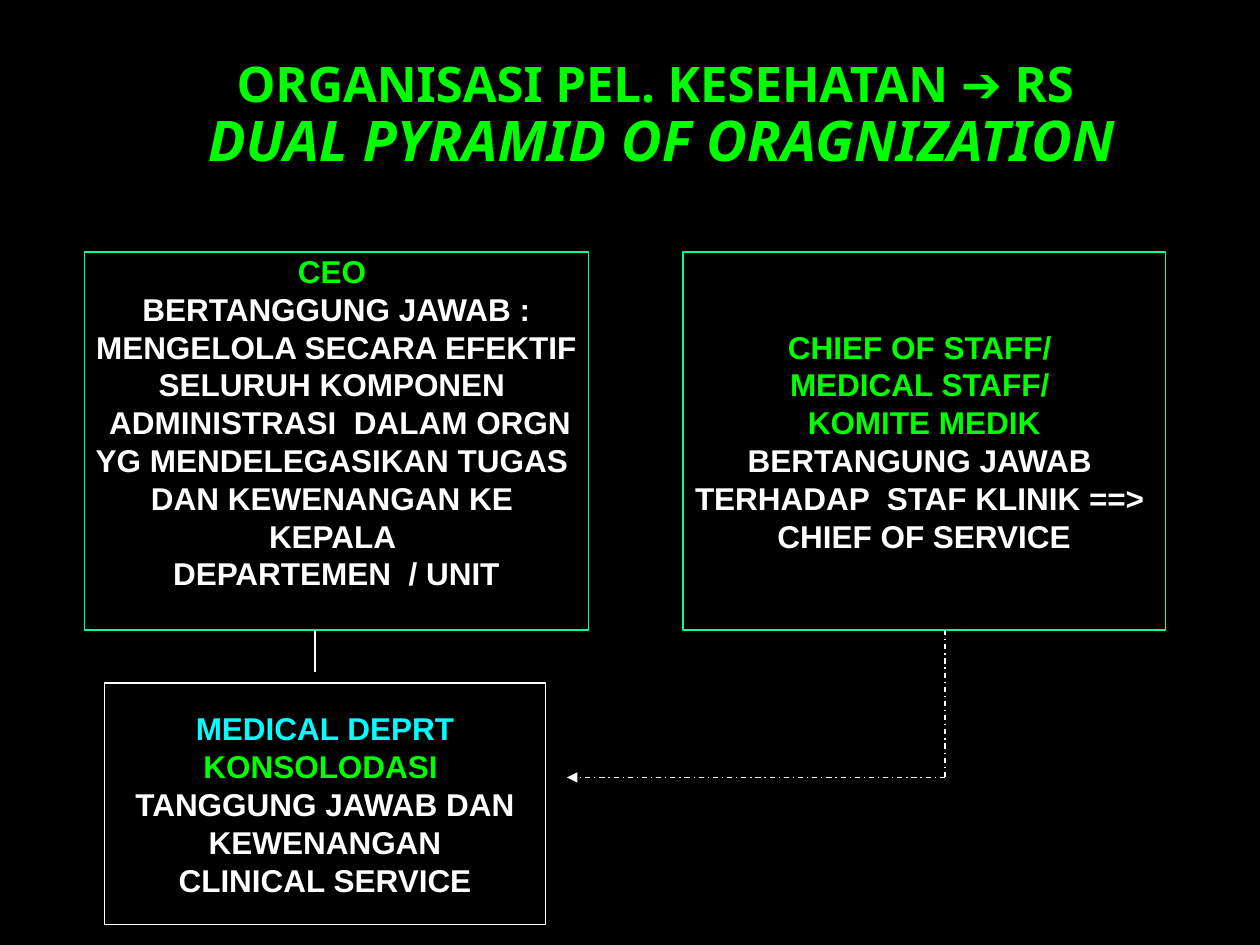
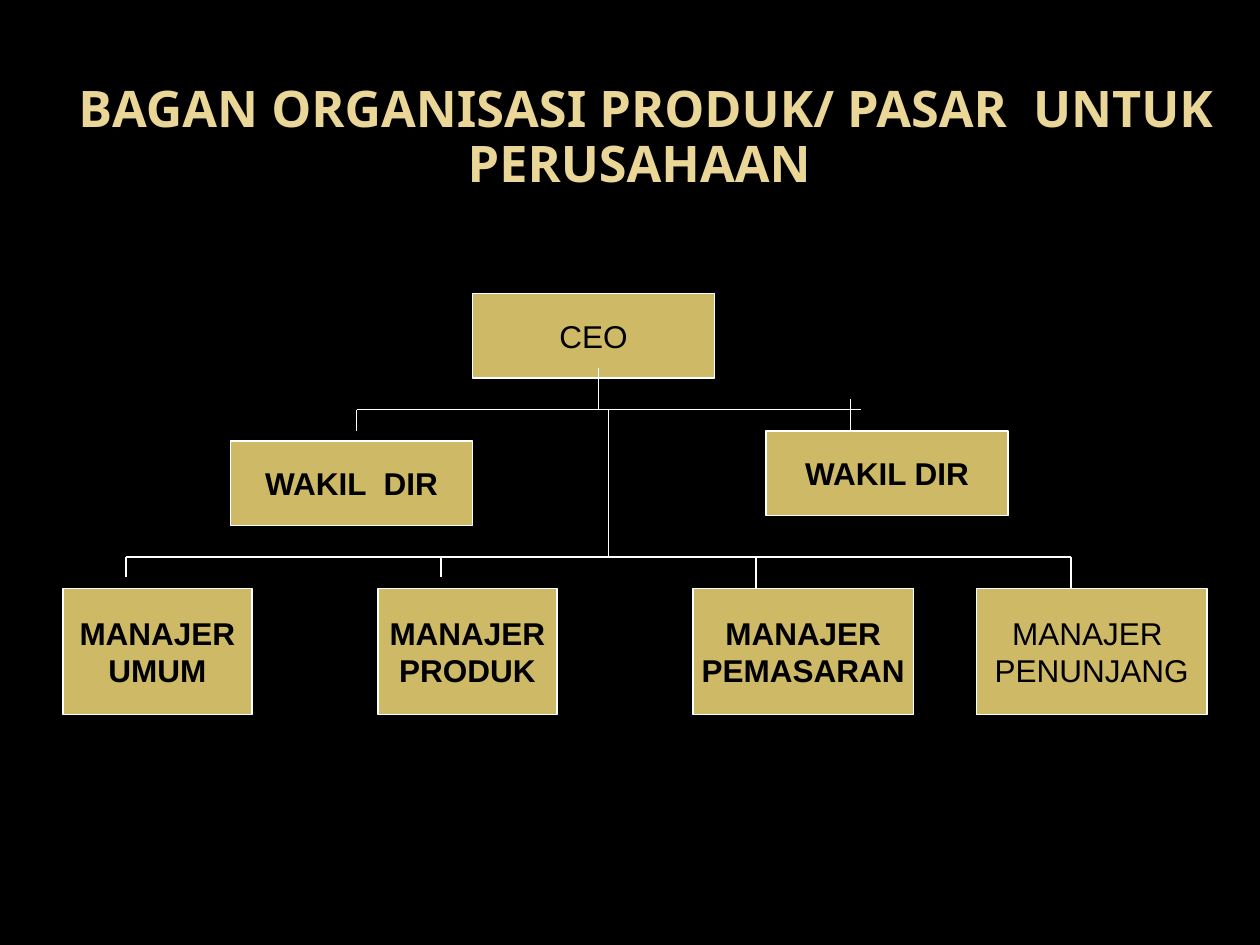
from dataclasses import dataclass
from typing import Optional, Sequence

import pptx
import pptx.dml.color
import pptx.enum.dml
import pptx.enum.shapes
import pptx.enum.text
import pptx.oxml
import pptx.oxml.ns
import pptx.presentation
import pptx.slide
import pptx.text.text
import pptx.util

Inches = pptx.util.Inches
TITLE_ONLY = 5


@dataclass(frozen=True)
class Theme:
    black: str = "000000"
    white: str = "FFFFFF"
    green: str = "00FF00"
    mint: str = "00FF99"
    cyan: str = "00FFFF"
    sand: str = "EAD696"
    gold: str = "CEB966"
    title_font: str = "Noto Sans"
    body_font: str = "Arial"
    body_size: float = 18
    title_size: float = 28
    subtitle_size: float = 32
    chart_title_size: float = 28.8
    title_spacing: float = 0.9
    line_width: float = 0.75


THEME = Theme()


@dataclass(frozen=True)
class Line:
    text: str
    color: str
    size: float = THEME.body_size
    bold: bool = True
    italic: bool = False


@dataclass(frozen=True)
class Box:
    left: float
    top: float
    width: float
    height: float
    lines: Sequence[Line]
    fill: str = THEME.black
    border: str = THEME.white
    bottom_space: Optional[float] = None


@dataclass(frozen=True)
class Link:
    x1: float
    y1: float
    x2: float
    y2: float
    dashed: bool = False
    arrow: bool = False


def rgb(color: str) -> pptx.dml.color.RGBColor:
    return pptx.dml.color.RGBColor.from_string(color)


def lines_of(color: str, *texts: str, bold: bool = True) -> list[Line]:
    return [Line(text, color, bold=bold) for text in texts]


def write_text(frame: pptx.text.text.TextFrame, lines: Sequence[Line], *,
               font: str, wrap: bool, one_paragraph: bool = False,
               spacing: Optional[float] = None) -> None:
    frame.word_wrap = wrap
    frame.auto_size = pptx.enum.text.MSO_AUTO_SIZE.NONE
    frame.vertical_anchor = pptx.enum.text.MSO_ANCHOR.MIDDLE
    paragraph = frame.paragraphs[0]
    for index, line in enumerate(lines):
        if index and one_paragraph:
            paragraph.add_line_break()
        elif index:
            paragraph = frame.add_paragraph()
        paragraph.alignment = pptx.enum.text.PP_ALIGN.CENTER
        paragraph.line_spacing = spacing
        run = paragraph.add_run()
        run.text = line.text
        run.font.name = font
        run.font.size = pptx.util.Pt(line.size)
        run.font.bold = line.bold
        run.font.italic = line.italic
        run.font.color.rgb = rgb(line.color)


def add_titled_slide(deck: pptx.presentation.Presentation, title_lines: Sequence[Line], *,
                     left: float, top: float, width: float, height: float,
                     bottom_space: float = 0.05) -> pptx.slide.Slide:
    slide = deck.slides.add_slide(deck.slide_layouts[TITLE_ONLY])
    slide.background.fill.solid()
    slide.background.fill.fore_color.rgb = rgb(THEME.black)
    title = slide.shapes.title
    title.left, title.top = Inches(left), Inches(top)
    title.width, title.height = Inches(width), Inches(height)
    title.text_frame.margin_bottom = Inches(bottom_space)
    write_text(title.text_frame, title_lines, font=THEME.title_font, wrap=True,
               one_paragraph=True, spacing=THEME.title_spacing)
    return slide


def draw_box(slide: pptx.slide.Slide, box: Box) -> None:
    shape = slide.shapes.add_shape(
        pptx.enum.shapes.MSO_SHAPE.RECTANGLE,
        Inches(box.left), Inches(box.top), Inches(box.width), Inches(box.height))
    shape.shadow.inherit = False
    shape.fill.solid()
    shape.fill.fore_color.rgb = rgb(box.fill)
    shape.line.color.rgb = rgb(box.border)
    shape.line.width = pptx.util.Pt(THEME.line_width)
    if box.bottom_space is not None:
        shape.text_frame.margin_top = 0
        shape.text_frame.margin_bottom = Inches(box.bottom_space)
    write_text(shape.text_frame, box.lines, font=THEME.body_font, wrap=False)


def draw_link(slide: pptx.slide.Slide, link: Link) -> None:
    connector = slide.shapes.add_connector(
        pptx.enum.shapes.MSO_CONNECTOR.STRAIGHT,
        Inches(link.x1), Inches(link.y1), Inches(link.x2), Inches(link.y2))
    connector.line.color.rgb = rgb(THEME.white)
    connector.line.width = pptx.util.Pt(THEME.line_width)
    if link.dashed:
        connector.line.dash_style = pptx.enum.dml.MSO_LINE.DASH_DOT
    if link.arrow:
        arrowhead = pptx.oxml.parse_xml(
            f'<a:tailEnd {pptx.oxml.ns.nsdecls("a")} type="triangle"/>')
        connector.line._get_or_add_ln().append(arrowhead)
    connector._element.spPr.append(
        pptx.oxml.parse_xml(f'<a:effectLst {pptx.oxml.ns.nsdecls("a")}/>'))


def draw_diagram(slide: pptx.slide.Slide, boxes: Sequence[Box], links: Sequence[Link]) -> None:
    for box in boxes:
        draw_box(slide, box)
    for link in links:
        draw_link(slide, link)


def build_dual_pyramid(deck: pptx.presentation.Presentation) -> None:
    slide = add_titled_slide(
        deck,
        [Line("ORGANISASI PEL. KESEHATAN ➔ RS ", THEME.green, THEME.title_size),
         Line("DUAL PYRAMID OF ORAGNIZATION", THEME.green, THEME.subtitle_size, italic=True)],
        left=0.5, top=0.3, width=9.5, height=1.25)

    # Responsibilities of the two chiefs and the shared department
    ceo = Box(0.67, 2, 4, 3, lines_of(THEME.green, "CEO ") + lines_of(
        THEME.white, "BERTANGGUNG JAWAB :", " MENGELOLA SECARA EFEKTIF ",
        "SELURUH KOMPONEN ", " ADMINISTRASI  DALAM ORGN", "YG MENDELEGASIKAN TUGAS ",
        "DAN KEWENANGAN KE ", "KEPALA ", "DEPARTEMEN  / UNIT"),
        border=THEME.mint, bottom_space=0.3)
    chief_of_staff = Box(5.42, 2, 3.83, 3, lines_of(
        THEME.green, "CHIEF OF STAFF/ ", "MEDICAL STAFF/ ", "KOMITE MEDIK") + lines_of(
        THEME.white, "BERTANGUNG JAWAB ", "TERHADAP  STAF KLINIK ==> ", "CHIEF OF SERVICE"),
        border=THEME.mint)
    medical_department = Box(0.83, 5.42, 3.5, 1.92, [
        *lines_of(THEME.cyan, "MEDICAL DEPRT"),
        *lines_of(THEME.green, "KONSOLODASI "),
        *lines_of(THEME.white, "TANGGUNG JAWAB DAN", " KEWENANGAN ", "CLINICAL SERVICE")])

    # Direct line from the CEO, dashed line from the medical staff
    links = [
        Link(7.5, 5, 7.5, 6.17, dashed=True),
        Link(7.5, 6.17, 4.5, 6.17, dashed=True, arrow=True),
        Link(2.5, 5, 2.5, 5.33),
    ]
    draw_diagram(slide, [ceo, chief_of_staff, medical_department], links)


def position(left: float, top: float, width: float, height: float, *texts: str,
             bold: bool = True) -> Box:
    return Box(left, top, width, height, lines_of(THEME.black, *texts, bold=bold),
               fill=THEME.gold)


def build_company_chart(deck: pptx.presentation.Presentation) -> None:
    slide = add_titled_slide(
        deck,
        [Line("BAGAN ORGANISASI PRODUK/ PASAR  UNTUK PERUSAHAAN ", THEME.sand,
              THEME.chart_title_size)],
        left=0.5, top=0.67, width=9.25, height=1.33, bottom_space=0.52)

    # Director and deputies
    leader_size = (1.92, 0.67)
    positions = [
        position(3.75, 2.33, *leader_size, "CEO", bold=False),
        position(1.83, 3.5, *leader_size, "WAKIL  DIR"),
        position(6.08, 3.42, *leader_size, "WAKIL DIR"),
    ]

    # Managers
    manager_top, manager_height = 4.67, 1
    for left, width, field, bold in [
        (0.5, 1.5, "UMUM", True),
        (3, 1.42, "PRODUK", True),
        (5.5, 1.75, "PEMASARAN", True),
        (7.75, 1.83, "PENUNJANG", False),
    ]:
        role = "MANAJER" if bold else "MANAJER "
        positions.append(
            position(left, manager_top, width, manager_height, role, field, bold=bold))

    # Deputy rail, trunk and manager rail
    deputy_rail, manager_rail = 3.25, 4.42
    links = [
        Link(2.83, deputy_rail, 6.83, deputy_rail),
        Link(2.83, deputy_rail, 2.83, 3.42),
        Link(4.75, 2.92, 4.75, deputy_rail),
        Link(6.75, 3.17, 6.75, 3.42),
        Link(4.83, deputy_rail, 4.83, manager_rail),
        Link(1, manager_rail, 8.5, manager_rail),
    ]
    for index, drop_end in enumerate([4.58, 4.58, manager_top, manager_top]):
        drop_x = 1 + 2.5 * index
        links.append(Link(drop_x, manager_rail, drop_x, drop_end))
    draw_diagram(slide, positions, links)


def main() -> None:
    deck = pptx.Presentation()
    deck.slide_width, deck.slide_height = Inches(10), Inches(7.5)
    build_dual_pyramid(deck)
    build_company_chart(deck)
    deck.save("out.pptx")


if __name__ == "__main__":
    main()
